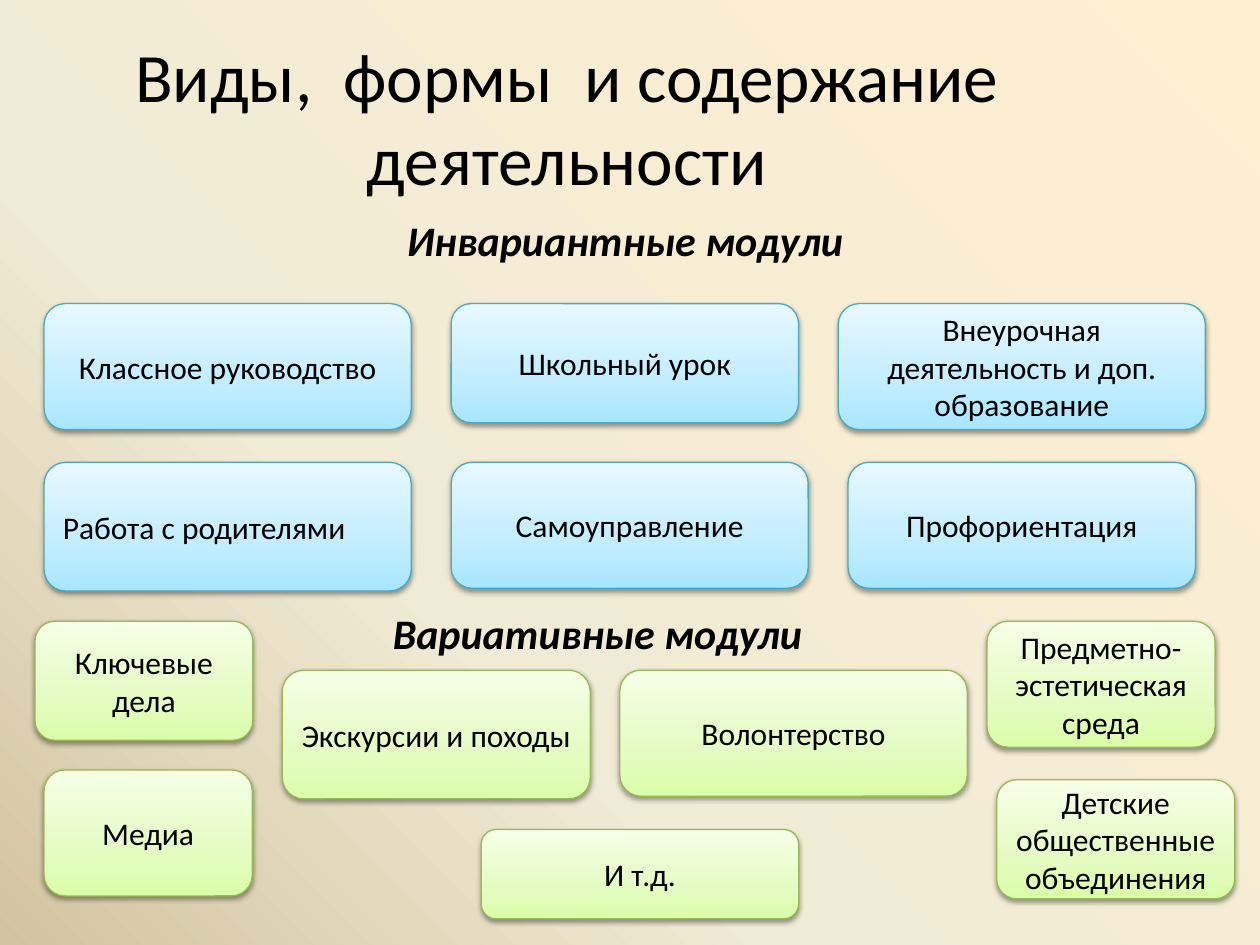
from lxml.etree import SubElement
from pptx import Presentation
from pptx.dml.color import RGBColor
from pptx.enum.shapes import MSO_SHAPE as Shape
from pptx.enum.text import MSO_ANCHOR as Anchor, PP_ALIGN as Align
from pptx.oxml.ns import qn
from pptx.util import Pt

COLORS = {"text": "000000", "shadow": "000000",
          "invariant_line": "46AAC5", "variable_line": "98B955"}
BACKGROUND = [(0, "FFEFD1"), (65, "F0EBD5"), (100, "D1C39F")]
GRADIENTS = {
    "invariant": [(0, "A7E6FF"), (35, "C1EDFF"), (100, "E7F8FF")],
    "variable": [(0, "DAFDA7"), (35, "E4FCC2"), (100, "F5FFE7")],
}

TITLE = "Виды,  формы  и содержание деятельности"
INVARIANT_HEADING = "Инвариантные модули"
VARIABLE_HEADING = "Вариативные модули"

# Each module: text, left, top, width, height
ROW_1, ROW_2 = 173.5, 264.2
SIDE_ROW, MIDDLE_ROW = 355, 383
MODULES = {
    "invariant": [
        ("Классное руководство", 25.2, ROW_1, 209.8, 72),
        ("Школьный урок", 257.8, ROW_1, 198.5, 68),
        ("Внеурочная деятельность и доп. образование", 479, ROW_1, 209.8, 72),
        ("Работа с родителями", 25.2, ROW_2, 209.8, 73.5),
        ("Самоуправление", 257.8, ROW_2, 204, 72),
        ("Профориентация", 484.6, ROW_2, 198.5, 72),
    ],
    "variable": [
        ("Ключевые дела", 20, SIDE_ROW, 124.5, 68),
        ("Медиа", 25.2, 440, 119, 72),
        ("Экскурсии и походы", 161.3, MIDDLE_ROW, 176, 73.5),
        ("Волонтерство", 354.2, MIDDLE_ROW, 198.5, 72),
        ("И т.д.", 275, 474, 181.4, 51),
        ("Предметно-эстетическая среда", 564, SIDE_ROW, 130.4, 72),
        ("Детские общественные объединения", 569.6, 445.6, 136, 68),
    ],
}
LEFT_ALIGNED = {"Работа с родителями"}


def set_gradient(fill, owner, stops, angle):
    """Fill with any number of stops; the angle runs clockwise."""
    fill.gradient()
    gradient = owner.find(".//" + qn("a:gradFill"))
    for child in list(gradient):
        gradient.remove(child)
    stop_list = SubElement(gradient, qn("a:gsLst"))
    for percent, color in stops:
        stop = SubElement(stop_list, qn("a:gs"), pos=str(percent * 1000))
        SubElement(stop, qn("a:srgbClr"), val=color)
    SubElement(gradient, qn("a:lin"), ang=str(angle * 60000), scaled="0")


def add_soft_shadow(shape):
    shape.shadow.inherit = False
    effects = shape.element.spPr.find(qn("a:effectLst"))
    shadow = SubElement(effects, qn("a:outerShdw"), blurRad=str(Pt(3.1)),
                        dist=str(Pt(1.6)), dir="5400000", rotWithShape="0")
    color = SubElement(shadow, qn("a:srgbClr"), val=COLORS["shadow"])
    SubElement(color, qn("a:alpha"), val="38000")


def write(shape, text, *, size=18, bold=False, italic=False, align=Align.CENTER,
          anchor=Anchor.MIDDLE, indent=0, top_inset=3.6):
    frame = shape.text_frame
    frame.word_wrap = True
    frame.vertical_anchor = anchor
    frame.margin_top = Pt(top_inset)
    paragraph = frame.paragraphs[0]
    paragraph.alignment = align
    if indent:
        paragraph._p.get_or_add_pPr().set("marL", str(Pt(indent)))
    run = paragraph.add_run()
    run.text = text
    font = run.font
    font.name, font.size, font.bold, font.italic = "Calibri", Pt(size), bold, italic
    font.color.rgb = RGBColor.from_string(COLORS["text"])


def add_module(slide, group, text, *box):
    module = slide.shapes.add_shape(Shape.ROUNDED_RECTANGLE, *map(Pt, box))
    set_gradient(module.fill, module.element, GRADIENTS[group], 270)
    module.line.color.rgb = RGBColor.from_string(COLORS[group + "_line"])
    module.line.width = Pt(0.75)
    add_soft_shadow(module)
    write(module, text, align=Align.LEFT if text in LEFT_ALIGNED else Align.CENTER)


def main():
    deck = Presentation()
    deck.slide_width, deck.slide_height = Pt(720), Pt(540)
    slide = deck.slides.add_slide(deck.slide_layouts[6])
    set_gradient(slide.background.fill, slide.element, BACKGROUND, 135)

    def add_text(box, text, **style):
        write(slide.shapes.add_textbox(*map(Pt, box)), text, **style)

    heading = dict(size=24, bold=True, italic=True, align=Align.LEFT, anchor=Anchor.TOP)
    add_text((0, 111.6, 648, 370.8), INVARIANT_HEADING,
             indent=225.4, top_inset=11.2, **heading)
    add_text((0, 21.6, 648, 90), TITLE, size=39.6)
    add_text((201.6, 343.4, 283.7, 36), VARIABLE_HEADING, indent=15.8, **heading)

    for group, modules in MODULES.items():
        for module in modules:
            add_module(slide, group, *module)
    deck.save("out.pptx")


if __name__ == "__main__":
    main()
